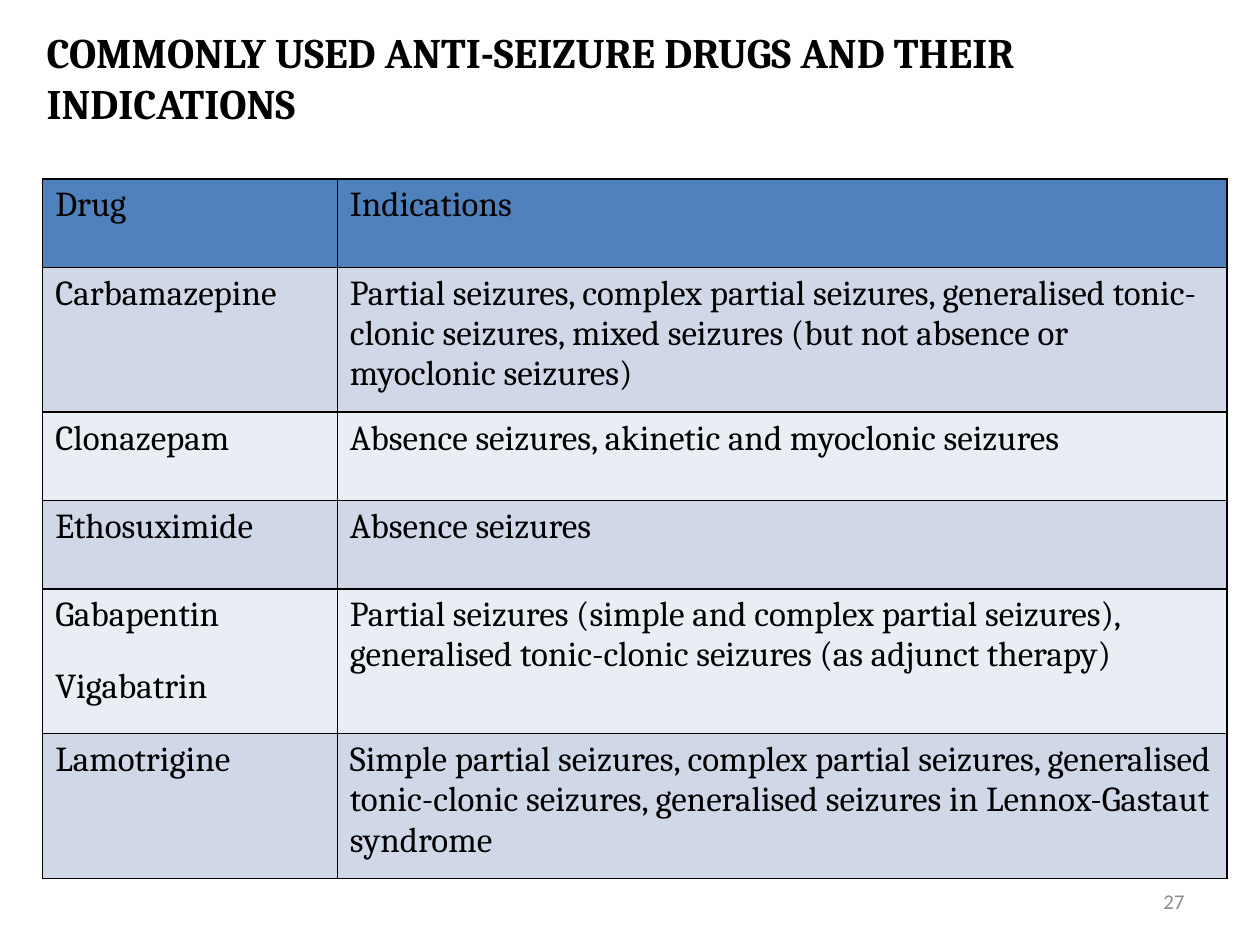
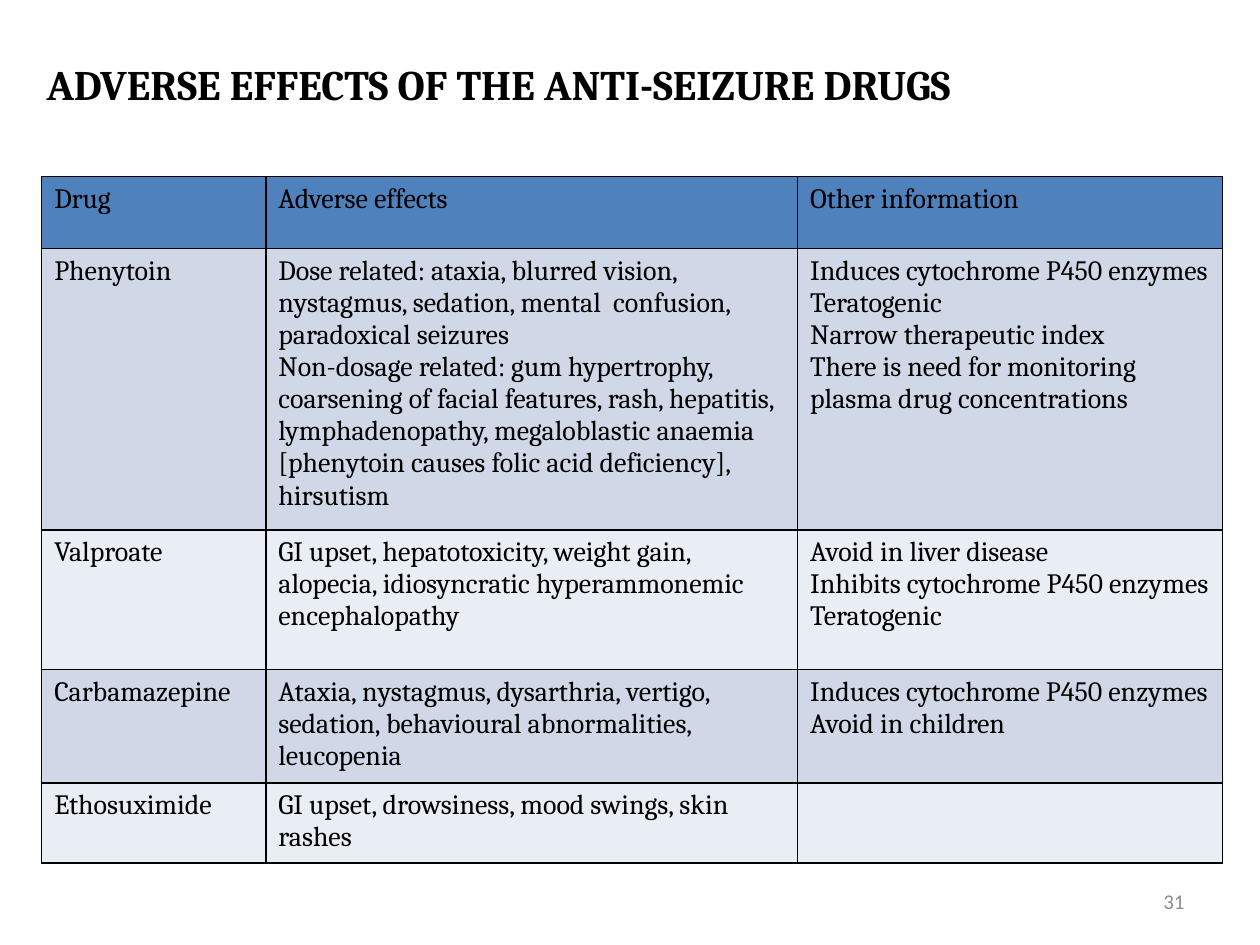
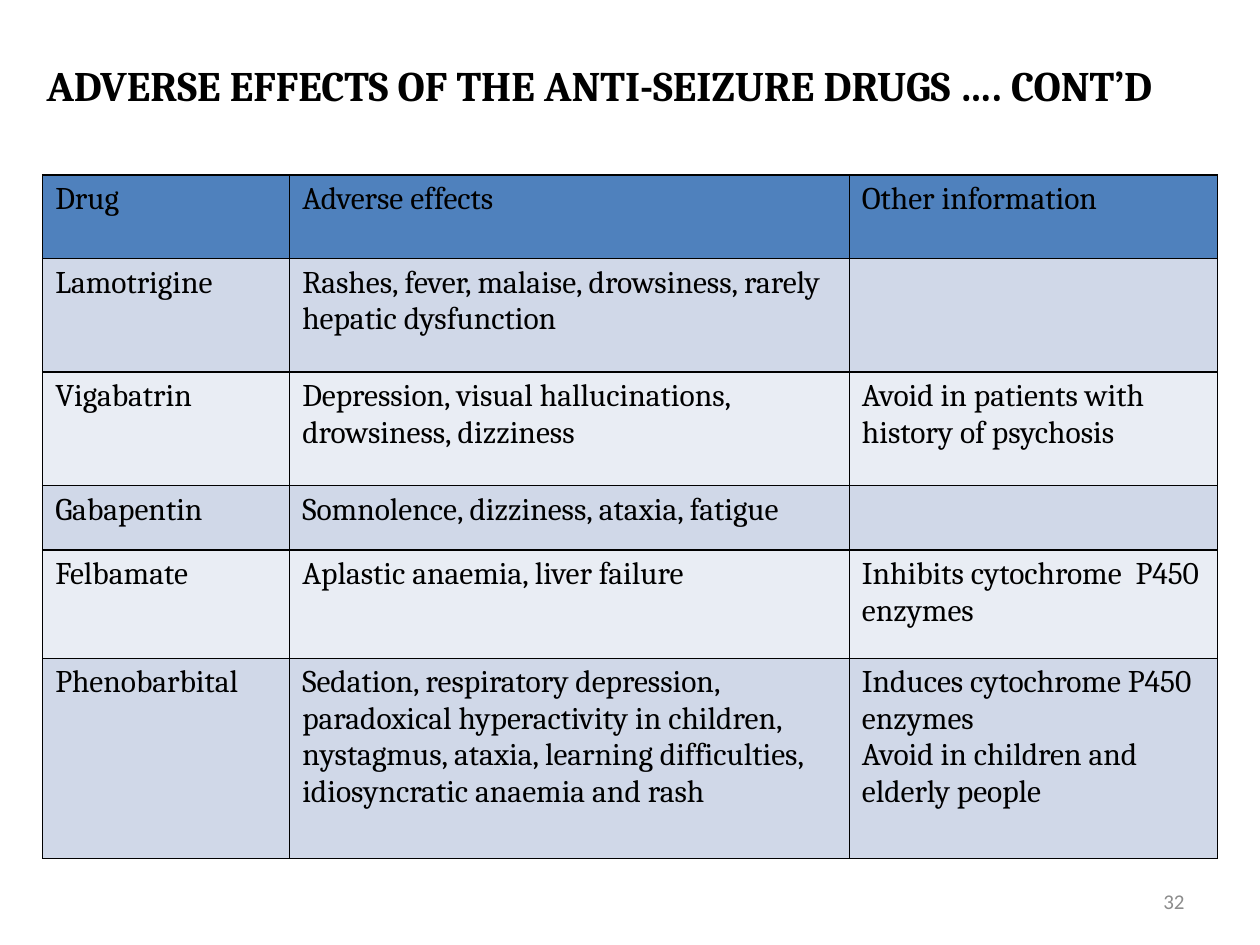
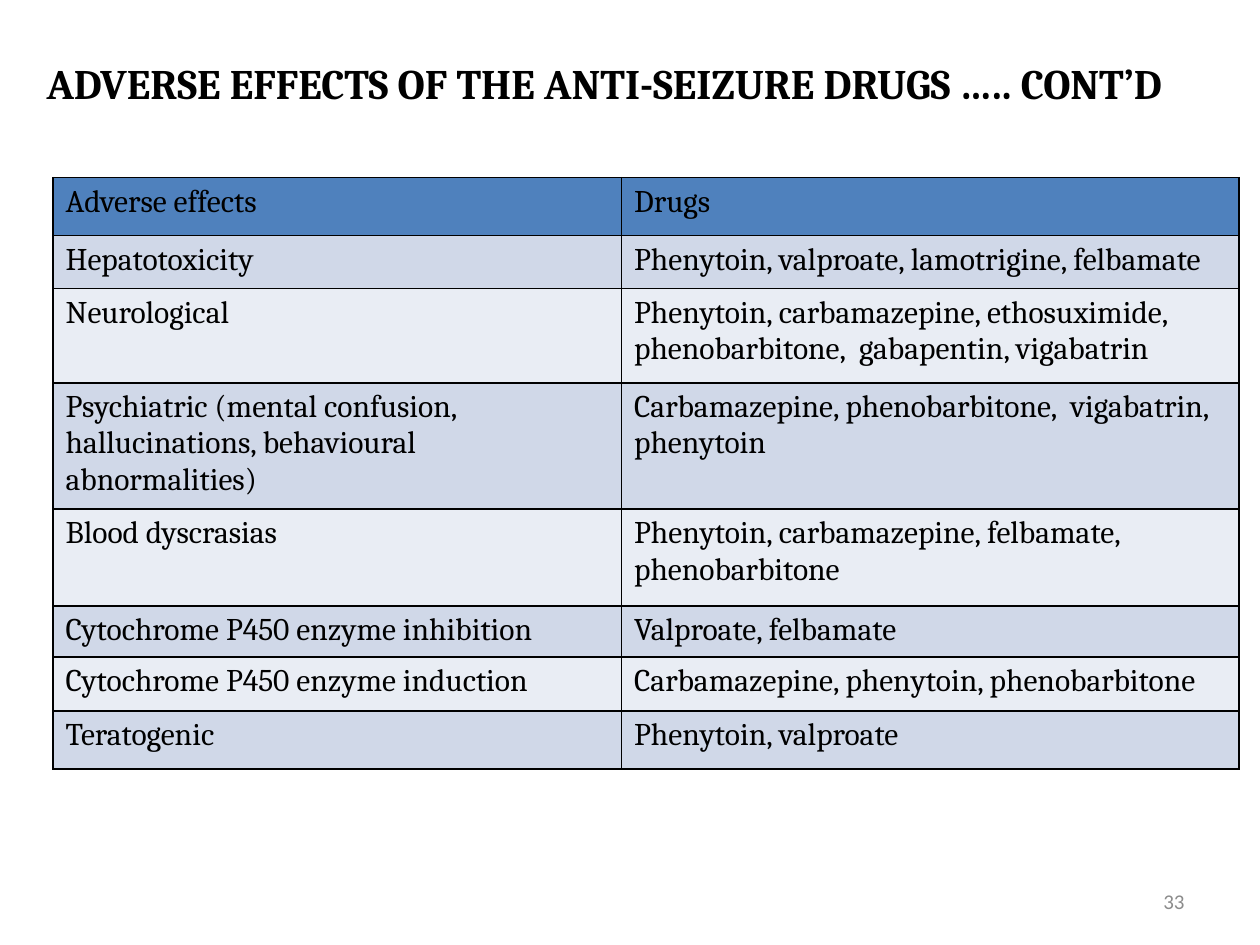
"""Build four slides of tables on anti-seizure drugs, their uses and adverse effects."""
from lxml import etree
from pptx import Presentation
from pptx import util as u
from pptx.dml.color import RGBColor
from pptx.enum import text
from pptx.oxml.ns import qn

BLACK = RGBColor(0x00, 0x00, 0x00)
GREY = RGBColor(0x8C, 0x8C, 0x8C)
HEADER = RGBColor(0x4F, 0x81, 0xBD)
BANDS = (RGBColor(0xE9, 0xED, 0xF4), RGBColor(0xD0, 0xD8, 0xE8))

TITLE = {"name": "Cambria", "size": u.Pt(24), "bold": True}
NUMBER = {"name": "Calibri", "size": u.Pt(12)}
TITLE_LEFT, TITLE_WIDTH = 0.69, 24.1
NUMBER_BOX = (18.21, 17.65, 5.92, 1.02)

INDICATIONS = [
    ("Drug", "Indications"),
    ("Carbamazepine", "Partial seizures, complex partial seizures, generalised tonic-clonic "
     "seizures, mixed seizures (but not absence or myoclonic seizures)"),
    ("Clonazepam", "Absence seizures, akinetic and myoclonic seizures"),
    ("Ethosuximide", "Absence seizures"),
    ("Gabapentin\nVigabatrin", "Partial seizures (simple and complex partial seizures), "
     "generalised tonic-clonic seizures (as adjunct therapy)"),
    ("Lamotrigine", "Simple partial seizures, complex partial seizures, generalised "
     "tonic-clonic seizures, generalised seizures in Lennox-Gastaut syndrome"),
]
EFFECTS_HEADER = ("Drug", "Adverse effects", "Other information")
OLDER_DRUGS = [
    EFFECTS_HEADER,
    ("Phenytoin",
     "Dose related: ataxia, blurred vision, nystagmus, sedation, mental  confusion, "
     "paradoxical seizures\n"
     "Non-dosage related: gum hypertrophy, coarsening of facial features, rash, hepatitis, "
     "lymphadenopathy, megaloblastic anaemia [phenytoin causes folic acid deficiency], hirsutism",
     "Induces cytochrome P450 enzymes\nTeratogenic\nNarrow therapeutic index\n"
     "There is need for monitoring plasma drug concentrations"),
    ("Valproate",
     "GI upset, hepatotoxicity, weight gain, alopecia, idiosyncratic hyperammonemic "
     "encephalopathy",
     "Avoid in liver disease\nInhibits cytochrome P450 enzymes\nTeratogenic"),
    ("Carbamazepine",
     "Ataxia, nystagmus, dysarthria, vertigo, sedation, behavioural abnormalities, leucopenia",
     "Induces cytochrome P450 enzymes\nAvoid in children"),
    ("Ethosuximide", "GI upset, drowsiness, mood swings, skin rashes", ""),
]
NEWER_DRUGS = [
    EFFECTS_HEADER,
    ("Lamotrigine", "Rashes, fever, malaise, drowsiness, rarely hepatic dysfunction", ""),
    ("Vigabatrin", "Depression, visual hallucinations, drowsiness, dizziness",
     "Avoid in patients with history of psychosis"),
    ("Gabapentin", "Somnolence, dizziness, ataxia, fatigue", ""),
    ("Felbamate", "Aplastic anaemia, liver failure", "Inhibits cytochrome  P450 enzymes"),
    ("Phenobarbital",
     "Sedation, respiratory depression, paradoxical hyperactivity in children, nystagmus, "
     "ataxia, learning difficulties, idiosyncratic anaemia and rash",
     "Induces cytochrome P450 enzymes\nAvoid in children and elderly people"),
]
BY_EFFECT = [
    ("Adverse effects", "Drugs"),
    ("Hepatotoxicity", "Phenytoin, valproate, lamotrigine, felbamate"),
    ("Neurological",
     "Phenytoin, carbamazepine, ethosuximide, phenobarbitone,  gabapentin, vigabatrin"),
    ("Psychiatric (mental confusion, hallucinations, behavioural abnormalities)",
     "Carbamazepine, phenobarbitone,  vigabatrin,  phenytoin"),
    ("Blood dyscrasias", "Phenytoin, carbamazepine, felbamate, phenobarbitone"),
    ("Cytochrome P450 enzyme inhibition", "Valproate, felbamate"),
    ("Cytochrome P450 enzyme induction", "Carbamazepine, phenytoin, phenobarbitone"),
    ("Teratogenic", "Phenytoin, valproate"),
]


def format_text(tf, words, font, color=BLACK, **para):
    """Write words, one paragraph a line, with the given font and paragraph formats."""
    tf.text = words
    for p in tf.paragraphs:
        for name, value in para.items():
            setattr(p, name, value)
        for r in p.runs:
            for name, value in font.items():
                setattr(r.font, name, value)
            r.font.color.rgb = color


def add_text(s, box, words, font, color=BLACK, **para):
    """Add a wrapped, vertically centred text box."""
    tf = s.shapes.add_textbox(*map(u.Cm, box)).text_frame
    tf.word_wrap = True
    tf.vertical_anchor = text.MSO_ANCHOR.MIDDLE
    format_text(tf, words, font, color, **para)


def add_borders(cell):
    """Draw a thin black line on all four sides of a cell."""
    tc_pr = cell._tc.get_or_add_tcPr()
    for side in ("a:lnL", "a:lnR", "a:lnT", "a:lnB"):
        ln = etree.SubElement(tc_pr, qn(side), w=str(u.Pt(1)))
        fill = etree.SubElement(ln, qn("a:solidFill"))
        etree.SubElement(fill, qn("a:srgbClr"), val=str(BLACK))


def add_drug_table(s, left, top, widths, heights, rows, size, **para):
    """Add a bordered table with a blue header and banded rows."""
    box = map(u.Cm, (left, top, sum(widths), sum(heights)))
    table = s.shapes.add_table(len(rows), len(widths), *box).table
    table.first_row = table.horz_banding = False
    for col, width in zip(table.columns, widths):
        col.width = u.Cm(width)
    for row, height in zip(table.rows, heights):
        row.height = u.Cm(height)
    font = {"name": "Cambria", "size": u.Pt(size)}
    for i, row in enumerate(rows):
        for j, words in enumerate(row):
            cell = table.cell(i, j)
            add_borders(cell)
            cell.fill.solid()
            cell.fill.fore_color.rgb = BANDS[i % 2] if i else HEADER
            format_text(cell.text_frame, words, font, **para)


def add_slide(prs, title, top, height, number):
    """Add a blank slide with its title and page number."""
    s = prs.slides.add_slide(prs.slide_layouts[6])
    add_text(s, (TITLE_LEFT, top, TITLE_WIDTH, height), title, TITLE)
    add_text(s, NUMBER_BOX, str(number), NUMBER, GREY, alignment=text.PP_ALIGN.RIGHT)
    return s


def main():
    """Build and save the slides."""
    prs = Presentation()
    prs.slide_width, prs.slide_height = u.Cm(25.4), u.Cm(19.05)
    effects = "ADVERSE EFFECTS OF THE ANTI-SEIZURE DRUGS"

    s = add_slide(prs, "COMMONLY USED ANTI-SEIZURE DRUGS AND THEIR INDICATIONS", 0.41, 2.29, 27)
    add_drug_table(s, 0.86, 3.61, (5.94, 17.93), (1.78, 2.92, 1.78, 1.78, 2.92, 2.92),
                   INDICATIONS, 20, space_before=u.Pt(18))

    s = add_slide(prs, effects, 0.76, 1.85, 31)
    add_drug_table(s, 0.84, 3.56, (4.52, 10.72, 8.56), (1.45, 5.11, 2.82, 2.16, 1.17),
                   OLDER_DRUGS, 16)

    s = add_slide(prs, effects + " …. CONT’D", 0.48, 2.44, 32)
    add_drug_table(s, 0.86, 3.53, (4.98, 11.28, 7.42), (1.68, 2.29, 2.29, 1.3, 2.18, 4.04),
                   NEWER_DRUGS, 18)

    s = add_slide(prs, effects + " ….. CONT’D", 0.48, 2.39, 33)
    add_drug_table(s, 1.07, 3.58, (11.46, 12.45),
                   (1.17, 1.07, 1.9, 2.26, 1.96, 1.02, 1.09, 1.17), BY_EFFECT, 18)

    prs.save("out.pptx")


if __name__ == "__main__":
    main()
